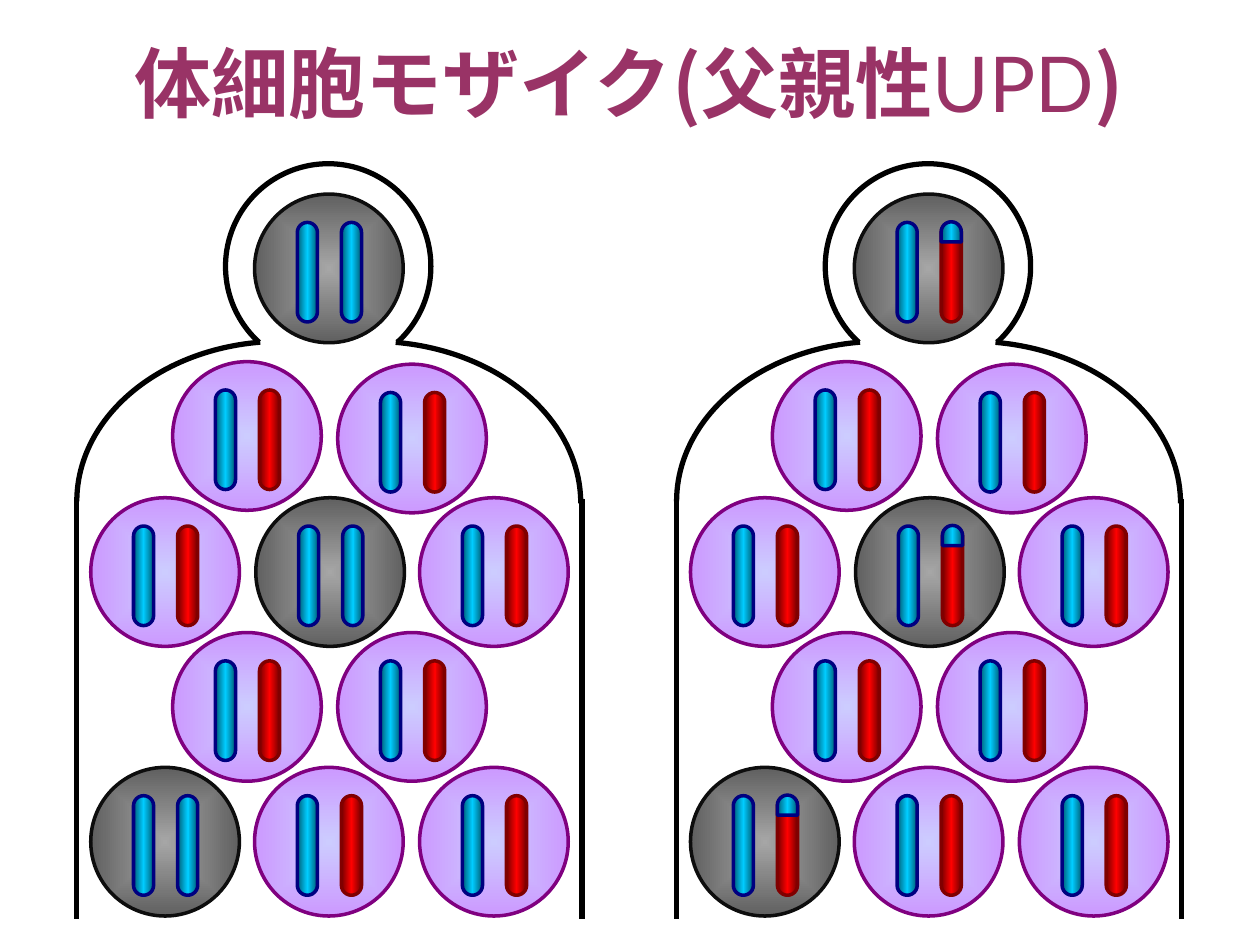
from pptx import Presentation
from pptx.dml.color import RGBColor
from pptx.enum.shapes import MSO_CONNECTOR as Line, MSO_SHAPE as Kind
from pptx.enum.text import MSO_ANCHOR as Anchor, PP_ALIGN as Align
from pptx.oxml import parse_xml
from pptx.oxml.ns import nsdecls, qn
from pptx.util import Inches, Pt
from lxml import etree

# Gradient stops, gradient direction and line colour of each part
RADIAL = '<a:path path="shape"><a:fillToRect l="50000" t="50000" r="50000" b="50000"/></a:path>'
ACROSS = '<a:lin ang="5400000" scaled="1"/>'
LOOKS = {
    "grey": (["A6A6A6", "606060"], RADIAL, "0D0D0D"),
    "violet": (["CCCCFF", "CC99FF"], RADIAL, "800080"),
    "blue": (["005E76", "00CCFF", "005E76"], ACROSS, "000080"),
    "red": (["760000", "FF0000", "760000"], ACROSS, "800000"),
}
SIZE, LONG, THIN = 1.18, 0.79, 0.16


def ink(line, color, width):
    line.color.rgb = RGBColor.from_string(color)
    line.width = Pt(width)


def part(group, kind, look, mid_x, mid_y, wide, high, turn=0):
    """Add a gradient shape centred on a point."""
    shape = group.shapes.add_shape(kind, Inches(mid_x - wide / 2), Inches(mid_y - high / 2),
                                   Inches(wide), Inches(high))
    shape.rotation = turn
    shape.shadow.inherit = False
    stops, way, edge = LOOKS[look]
    shape.fill.gradient()
    old = shape.element.spPr.find(qn("a:gradFill"))
    marks = "".join(f'<a:gs pos="{100000 * i // (len(stops) - 1)}"><a:srgbClr val="{c}"/></a:gs>'
                    for i, c in enumerate(stops))
    old.getparent().replace(old, parse_xml(
        f'<a:gradFill {nsdecls("a")} rotWithShape="1"><a:gsLst>{marks}</a:gsLst>{way}</a:gradFill>'))
    ink(shape.line, edge, 2)
    return shape


deck = Presentation()
deck.slide_width, deck.slide_height = Inches(10), Inches(7.5)
slide = deck.slides.add_slide(deck.slide_layouts[6])

# Title
frame = slide.shapes.add_textbox(Inches(0.06), Inches(0.1), Inches(9.86), Inches(1.1)).text_frame
for name, value in {"word_wrap": True, "vertical_anchor": Anchor.MIDDLE}.items():
    setattr(frame, name, value)
para = frame.paragraphs[0]
para.alignment = Align.CENTER
for text, face, bold in [("体細胞モザイク(父親性", "Noto Sans CJK JP", True),
                         ("UPD", "Lato", False),
                         (")", "Noto Sans CJK JP", True)]:
    run = para.add_run()
    run.text = text
    for name, value in {"size": Pt(44), "name": face, "bold": bold}.items():
        setattr(run.font, name, value)
    run.font.color.rgb = RGBColor.from_string("993366")
    etree.SubElement(run.font._element, qn("a:ea")).set("typeface", face)

# Body outline: left, top, width, height, start, end, mirrored
ARCS = [(1.79, 1.3, 1.63, 1.63, 79.39, 28.54, False),
        (1.31, 2.71, 3.3, 2.57, 166.85, 0, False),
        (0.61, 2.71, 3.24, 2.54, 166.44, 0, True)]

# Cells: left, top, mosaic
CELLS = [(2.02, 1.54, True),
         (1.37, 2.87, False), (2.68, 2.89, False),
         (0.72, 3.95, False), (2.03, 3.95, True), (3.33, 3.95, False),
         (1.37, 5.02, False), (2.68, 5.02, False),
         (0.72, 6.09, True), (2.02, 6.09, False), (3.33, 6.09, False)]

# Left body: whole chromosome swapped; right body: only its tip
for shift, tip in [(0, False), (4.76, True)]:
    body = slide.shapes.add_group_shape()
    for left, top, wide, high, start, end, mirror in ARCS:
        arc = body.shapes.add_shape(Kind.ARC, Inches(left + shift), Inches(top),
                                    Inches(wide), Inches(high))
        arc.adjustments[0], arc.adjustments[1] = start, end
        arc.shadow.inherit = False
        arc.fill.background()
        ink(arc.line, "000000", 3)
        if mirror:
            arc.element.spPr.find(qn("a:xfrm")).set("flipH", "1")
    for side in (0.61, 4.62):
        x = Inches(side + shift)
        edge = body.shapes.add_connector(Line.STRAIGHT, x, Inches(3.96), x, Inches(7.29))
        ink(edge.line, "000000", 3)
        etree.SubElement(edge.element.spPr, qn("a:effectLst"))

    for left, top, mosaic in CELLS:
        x = left + shift
        cell = slide.shapes.add_group_shape()
        part(cell, Kind.OVAL, "grey" if mosaic else "violet",
             x + SIZE / 2, top + SIZE / 2, SIZE, SIZE)
        # Chromosome pair
        second = "blue" if mosaic and not tip else "red"
        for look, step in [(second, 0.77), ("blue", 0.42)]:
            bar = part(cell, Kind.ROUNDED_RECTANGLE, look, x + step, top + 0.62, LONG, THIN, 270)
            bar.adjustments[0] = 0.5
        if mosaic and tip:
            part(cell, Kind.FLOWCHART_DELAY, "blue", x + 0.77, top + 0.3, THIN, THIN, 270)

deck.save("out.pptx")
